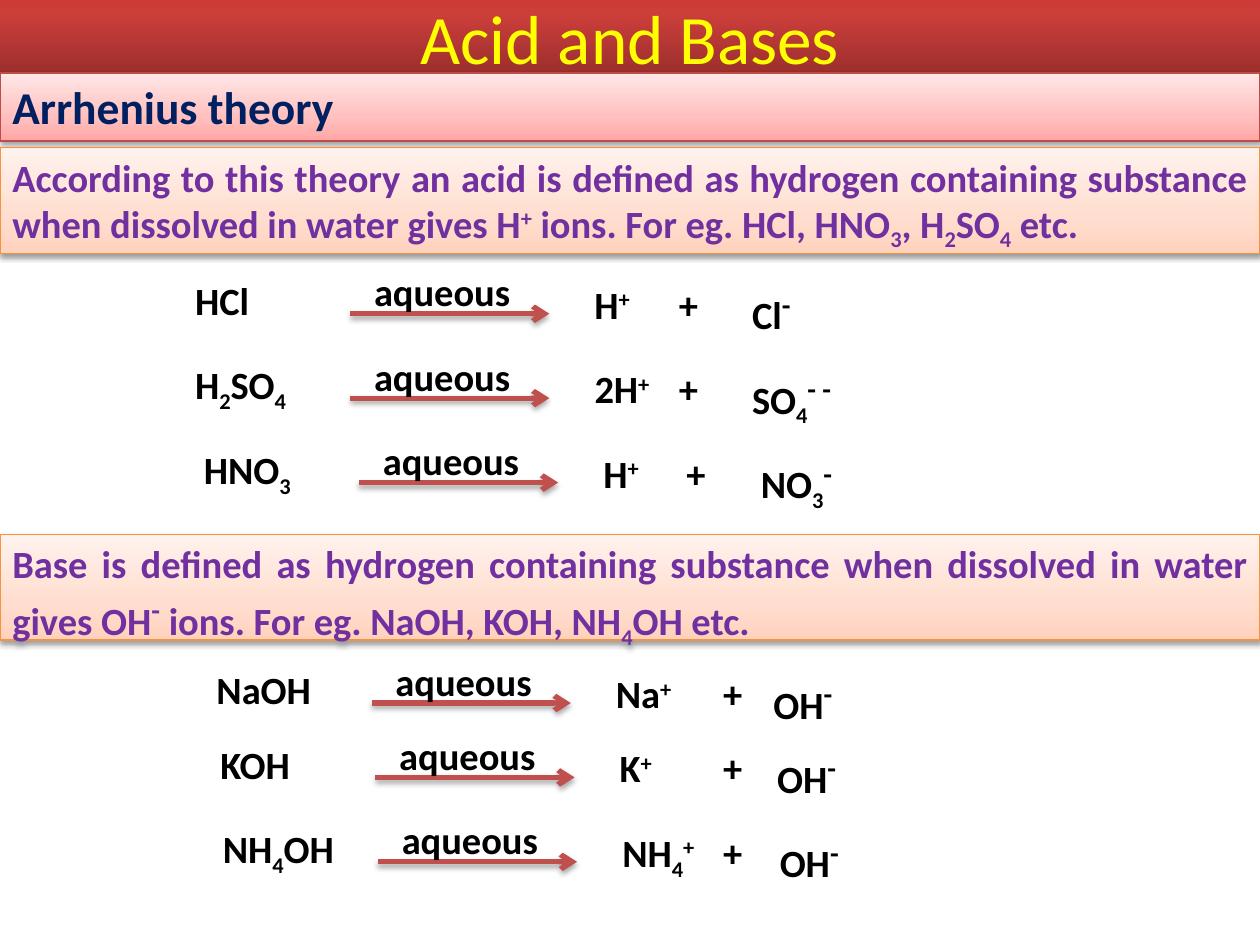
from copy import deepcopy
from typing import NamedTuple

from lxml import etree
from pptx import Presentation
from pptx.dml.color import RGBColor
from pptx.enum.shapes import MSO_CONNECTOR, MSO_SHAPE
from pptx.enum.text import MSO_ANCHOR, MSO_AUTO_SIZE, PP_ALIGN
from pptx.oxml import parse_xml
from pptx.oxml.ns import nsdecls, qn
from pptx.util import Inches, Pt

RECTANGLE = MSO_SHAPE.RECTANGLE
STRAIGHT = MSO_CONNECTOR.STRAIGHT
TOP, MIDDLE = MSO_ANCHOR.TOP, MSO_ANCHOR.MIDDLE
LEFT, CENTER, JUSTIFY = PP_ALIGN.LEFT, PP_ALIGN.CENTER, PP_ALIGN.JUSTIFY
FIXED, GROW = MSO_AUTO_SIZE.NONE, MSO_AUTO_SIZE.SHAPE_TO_FIT_TEXT

BLACK = RGBColor(0x00, 0x00, 0x00)
YELLOW = RGBColor(0xFF, 0xFF, 0x00)
NAVY = RGBColor(0x00, 0x20, 0x60)
PURPLE = RGBColor(0x70, 0x30, 0xA0)
ARROW_RED = RGBColor(0xC0, 0x50, 0x4D)
PINK_EDGE = RGBColor(0xBF, 0x4C, 0x48)
ORANGE_EDGE = RGBColor(0xF6, 0x92, 0x40)


class Stop(NamedTuple):
    position: float
    color: RGBColor


class Span(NamedTuple):
    text: str
    baseline: int = 0
    size: float = 22


class Banner(NamedTuple):
    top: float
    height: float
    stops: list[Stop]
    edge: RGBColor
    spans: list[Span]
    color: RGBColor
    align: PP_ALIGN


class Formula(NamedTuple):
    width: float
    spans: list[Span]


class Reaction(NamedTuple):
    left: float
    top: float
    plus_left: float
    reactant: Formula
    cation: Formula
    anion: Formula


def sub(text: str) -> Span:
    return Span(text, -25)


def sup(text: str, size: float = 22) -> Span:
    return Span(text, 30, size)


RED_STOPS = [Stop(0, RGBColor(0x9C, 0x2F, 0x2D)), Stop(0.8, RGBColor(0xCB, 0x3E, 0x3A)),
             Stop(1, RGBColor(0xCE, 0x3B, 0x37))]
PINK_STOPS = [Stop(0, RGBColor(0xFF, 0xA6, 0xA5)), Stop(0.35, RGBColor(0xFF, 0xC0, 0xBF)),
              Stop(1, RGBColor(0xFF, 0xE7, 0xE7))]
PEACH_STOPS = [Stop(0, RGBColor(0xFF, 0xD2, 0xBD)), Stop(0.35, RGBColor(0xFF, 0xDE, 0xD0)),
               Stop(1, RGBColor(0xFF, 0xF2, 0xED))]

PLUS, MINUS = sup("+"), sup("-", 28)
HYDROXIDE = Formula(0.69, [Span("OH"), MINUS])
PROTON = Formula(0.5, [Span("H"), PLUS])

BANNERS = [
    Banner(0.58, 0.54, PINK_STOPS, PINK_EDGE, [Span("Arrhenius theory", 0, 26)], NAVY, LEFT),
    Banner(1.17, 0.84, PEACH_STOPS, ORANGE_EDGE, [
        Span("According to this theory an acid is defined as hydrogen containing "
             "substance when dissolved in water gives H"),
        PLUS, Span(" ions. For eg. HCl, HNO"), sub("3"), Span(", H"), sub("2"),
        Span("SO"), sub("4"), Span(" etc. ")], PURPLE, JUSTIFY),
    Banner(4.24, 0.84, PEACH_STOPS, ORANGE_EDGE, [
        Span("Base is defined as hydrogen containing substance when dissolved in water gives OH"),
        MINUS, Span(" ions. For eg. NaOH, KOH, NH"), sub("4"), Span("OH etc.")], PURPLE, JUSTIFY),
]

REACTIONS = [
    Reaction(1.45, 2.15, 5.29, Formula(0.63, [Span("HCl")]), PROTON,
             Formula(0.52, [Span("Cl"), MINUS])),
    Reaction(1.45, 2.82, 5.29, Formula(0.96, [Span("H"), sub("2"), Span("SO"), sub("4")]),
             Formula(0.65, [Span("2H"), PLUS]),
             Formula(0.88, [Span("SO"), sub("4"), sup("- -", 28)])),
    Reaction(1.52, 3.49, 5.35, Formula(0.91, [Span("HNO"), sub("3")]), PROTON,
             Formula(0.8, [Span("NO"), sub("3"), MINUS])),
    Reaction(1.62, 5.24, 5.64, Formula(0.96, [Span("NaOH")]),
             Formula(0.66, [Span("Na"), PLUS]), HYDROXIDE),
    Reaction(1.65, 5.83, 5.64, Formula(0.76, [Span("KOH")]),
             Formula(0.47, [Span("K"), PLUS]), HYDROXIDE),
    Reaction(1.67, 6.5, 5.64, Formula(1.11, [Span("NH"), sub("4"), Span("OH")]),
             Formula(0.81, [Span("NH"), sub("4"), PLUS]), HYDROXIDE),
]


def set_attributes(target, values: dict) -> None:
    for name, value in values.items():
        setattr(target, name, value)


def add_shadow(shape, opacity: int, distance: float) -> None:
    shape._element.spPr.append(parse_xml(
        f'<a:effectLst {nsdecls("a")}><a:outerShdw blurRad="{Pt(3.15)}" '
        f'dist="{Pt(distance)}" dir="5400000" rotWithShape="0"><a:srgbClr val="000000">'
        f'<a:alpha val="{opacity * 1000}"/></a:srgbClr></a:outerShdw></a:effectLst>'))


def fill_gradient(shape, stops: list[Stop]) -> None:
    shape.fill.gradient()
    shape.fill.gradient_angle = 90
    stop_list = shape._element.spPr.find(".//" + qn("a:gsLst"))
    stop_list.append(deepcopy(stop_list[-1]))
    for target, stop in zip(shape.fill.gradient_stops, stops):
        target.color.rgb = stop.color
        target.position = stop.position


def write(box, spans: list[Span], color: RGBColor, align: PP_ALIGN, frame_format: dict,
          bold: bool = True) -> None:
    set_attributes(box.text_frame, frame_format)
    para = box.text_frame.paragraphs[0]
    para.alignment = align
    for span in spans:
        run = para.add_run()
        run.text = span.text
        set_attributes(run.font, {"name": "Calibri", "size": Pt(span.size), "bold": bold})
        run.font.color.rgb = color
        if span.baseline:
            run.font._element.set("baseline", str(span.baseline * 1000))


def draw_title(page) -> None:
    title = page.shapes.title
    set_attributes(title, {"left": 0, "top": 0, "width": Inches(10), "height": Inches(0.58)})
    fill_gradient(title, RED_STOPS)
    add_shadow(title, 35, 1.8)
    write(title, [Span("Acid and Bases", 0, 39.6)], YELLOW, CENTER,
          {"vertical_anchor": MIDDLE, "word_wrap": True, "auto_size": FIXED}, False)


def draw_banner(page, banner: Banner) -> None:
    box = page.shapes.add_shape(RECTANGLE, 0, Inches(banner.top), Inches(10), Inches(banner.height))
    fill_gradient(box, banner.stops)
    box.line.color.rgb = banner.edge
    box.line.width = Pt(0.75)
    add_shadow(box, 38, 1.6)
    write(box, banner.spans, banner.color, banner.align,
          {"vertical_anchor": TOP, "word_wrap": True, "auto_size": FIXED})


def draw_formula(page, left: float, top: float, formula: Formula) -> None:
    box = page.shapes.add_textbox(Inches(left), Inches(top), Inches(formula.width), Inches(0.47))
    write(box, formula.spans, BLACK, LEFT, {"word_wrap": False, "auto_size": GROW})


def draw_arrow(page, left: float, top: float) -> None:
    arrow = page.shapes.add_connector(
        STRAIGHT, Inches(left), Inches(top), Inches(left + 1.58), Inches(top))
    arrow.line.color.rgb = ARROW_RED
    arrow.line.width = Pt(3)
    etree.SubElement(arrow.line._get_or_add_ln(), qn("a:tailEnd"), type="arrow")
    add_shadow(arrow, 35, 1.8)


def draw_reaction(page, reaction: Reaction) -> None:
    left, top = reaction.left, reaction.top
    product_top = top + 0.03
    draw_formula(page, left, top, reaction.reactant)
    draw_arrow(page, left + 1.33, top + 0.34)
    draw_formula(page, left + 1.42, top - 0.07, Formula(1.29, [Span("aqueous")]))
    draw_formula(page, left + 3.17, product_top, reaction.cation)
    draw_formula(page, reaction.plus_left, product_top, Formula(0.36, [Span("+")]))
    draw_formula(page, left + 4.42, product_top, reaction.anion)


def main() -> None:
    deck = Presentation()
    set_attributes(deck, {"slide_width": Inches(10), "slide_height": Inches(7.5)})
    page = deck.slides.add_slide(deck.slide_layouts[5])
    draw_title(page)
    for banner in BANNERS:
        draw_banner(page, banner)
    for reaction in REACTIONS:
        draw_reaction(page, reaction)
    deck.save("out.pptx")


if __name__ == "__main__":
    main()
